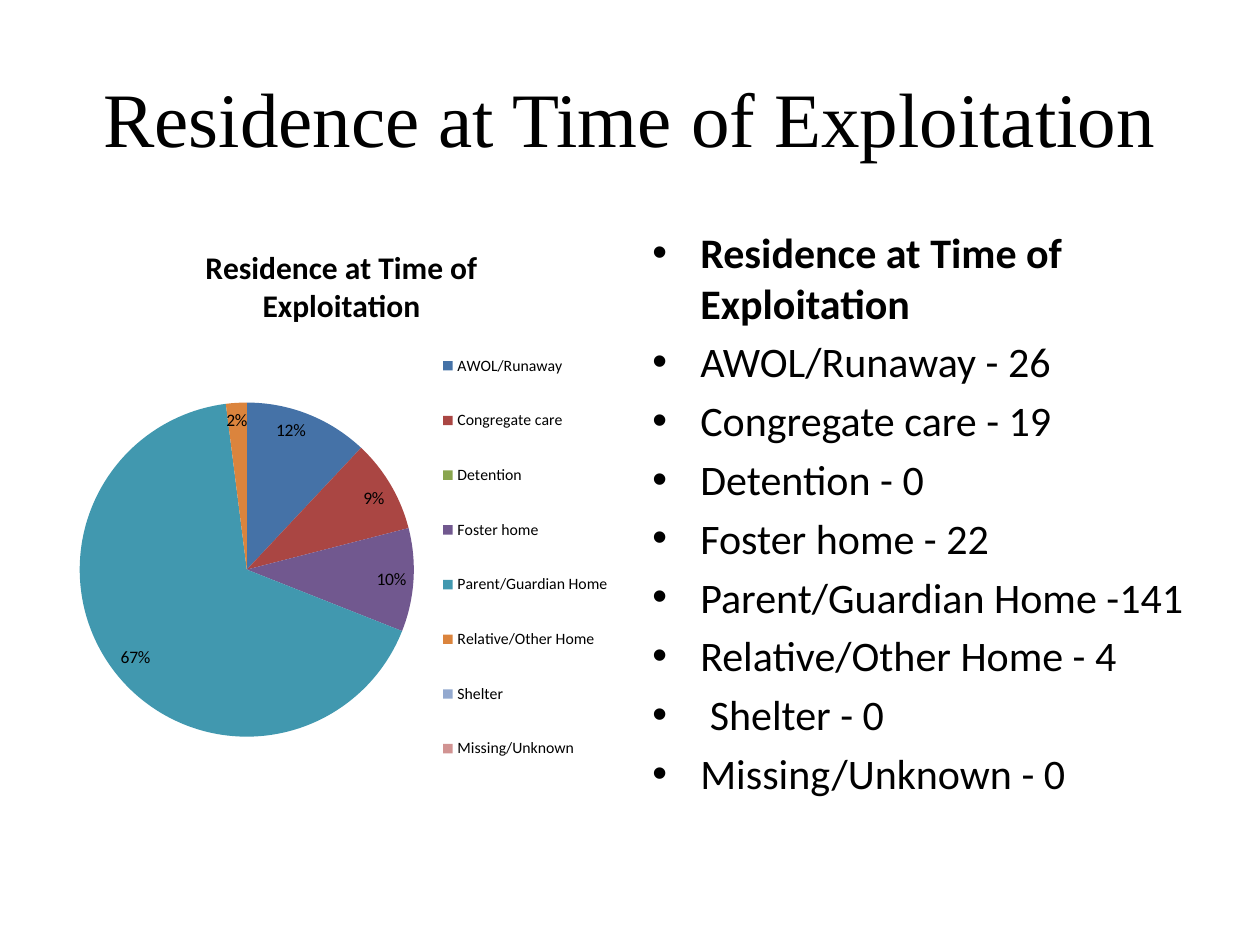
from lxml import etree
from pptx import Presentation
from pptx.chart.data import CategoryChartData
from pptx.dml.color import RGBColor
from pptx.enum.chart import XL_CHART_TYPE as ChartType
from pptx.enum.chart import XL_LABEL_POSITION as LabelPos
from pptx.enum.chart import XL_LEGEND_POSITION as LegendPos
from pptx.enum.text import MSO_ANCHOR as Anchor
from pptx.enum.text import PP_ALIGN as Align
from pptx.oxml.ns import qn
from pptx.util import Inches, Pt

BLACK = RGBColor(0, 0, 0)
SLICE_COLORS = [RGBColor.from_string(c) for c in (
    "4572A7", "AA4643", "89A54E", "71588F",
    "4198AF", "DB843D", "93A9CF", "D19392")]

HEADING = "Residence at Time of Exploitation"
SHARES = {
    "AWOL/Runaway": 12,
    "Congregate care": 9,
    "Detention": 0,
    "Foster home": 10,
    "Parent/Guardian Home": 67,
    "Relative/Other Home": 2,
    "Shelter": 0,
    "Missing/Unknown": 0,
}
COUNTS = [
    "AWOL/Runaway - 26",
    "Congregate care - 19",
    "Detention - 0",
    "Foster home - 22",
    "Parent/Guardian Home -141",
    "Relative/Other Home - 4",
    " Shelter - 0",
    "Missing/Unknown - 0",
]


class Deck:
    """Holds the style and the current slide."""
    body_font = "Calibri"
    title_font = "Times New Roman"

    def __init__(self, width, height):
        self.prs = Presentation()
        self.prs.slide_width, self.prs.slide_height = width, height
        self.s = self.prs.slides.add_slide(self.prs.slide_layouts[6])

    def style(self, font, size, name=None, bold=False):
        font.name, font.size, font.bold = name or self.body_font, Pt(size), bold
        font.color.rgb = BLACK

    def text_frame(self, x, y, w, h):
        tf = self.s.shapes.add_textbox(x, y, w, h).text_frame
        tf.word_wrap = True
        return tf

    def title(self, text, *box):
        tf = self.text_frame(*box)
        tf.vertical_anchor = Anchor.MIDDLE
        p = tf.paragraphs[0]
        p.alignment = Align.CENTER
        r = p.add_run()
        r.text = text
        self.style(r.font, 44, self.title_font)

    def bullets(self, heading, items, *box):
        tf = self.text_frame(*box)
        indent = Inches(0.38)
        for i, text in enumerate([heading, *items]):
            p = tf.add_paragraph() if i else tf.paragraphs[0]
            p.space_before = Pt(4.8)
            pPr = p._p.get_or_add_pPr()
            pPr.set("marL", str(indent))
            pPr.set("indent", str(-indent))
            etree.SubElement(pPr, qn("a:buFont")).set("typeface", "Arial")
            etree.SubElement(pPr, qn("a:buChar")).set("char", "•")
            r = p.add_run()
            r.text = text
            self.style(r.font, 24, bold=i == 0)

    def chart_layout(self, parent, index, inner=False, **fractions):
        """Place a chart part by fractions of the chart's size."""
        for old in parent.findall(qn("c:layout")):
            parent.remove(old)
        layout = etree.Element(qn("c:layout"))
        manual = etree.SubElement(layout, qn("c:manualLayout"))
        settings = {"layoutTarget": "inner"} if inner else {}
        settings.update(xMode="edge", yMode="edge", **fractions)
        for tag, value in settings.items():
            etree.SubElement(manual, qn("c:" + tag)).set("val", str(value))
        parent.insert(index, layout)

    def pie(self, title, shares, *box):
        data = CategoryChartData()
        data.categories = list(shares)
        data.add_series("Series 1", list(shares.values()))
        chart = self.s.shapes.add_chart(ChartType.PIE, *box, data).chart
        self.style(chart.font, 10)

        # Chart title
        chart.has_title = True
        r = chart.chart_title.text_frame.paragraphs[0].add_run()
        r.text = title
        self.style(r.font, 18, bold=True)

        # Slices and percentages
        plot = chart.plots[0]
        plot.vary_by_categories = True
        for i, color in enumerate(SLICE_COLORS):
            fill = plot.series[0].points[i].format.fill
            fill.solid()
            fill.fore_color.rgb = color
        labels = plot.series[0].data_labels
        labels.show_percentage = True
        labels.show_value = False
        labels.number_format = "0%;\\-0%;"
        labels.number_format_is_linked = False
        labels.position = LabelPos.INSIDE_END
        self.style(labels.font, 10)

        # Legend
        chart.has_legend = True
        legend = chart.legend
        legend.position = LegendPos.RIGHT
        legend.include_in_layout = False
        self.style(legend.font, 9)

        plot_area = chart._chartSpace.find(".//" + qn("c:plotArea"))
        self.chart_layout(plot_area, 0, inner=True, x=0.03, y=0.29, w=0.6, h=0.54)
        self.chart_layout(legend._element, 1, x=0.67, y=0.16, w=0.32, h=0.76)


def main():
    deck = Deck(Inches(10), Inches(7.5))
    margin, top = Inches(0.5), Inches(1.75)
    column = Inches(4.42), Inches(4.95)

    # Title above two equal columns: chart and counts
    deck.title(HEADING, margin, Inches(0.3), Inches(9), Inches(1.25))
    deck.pie(HEADING, SHARES, margin, top, *column)
    deck.bullets(HEADING, COUNTS, Inches(5.08), top, *column)
    deck.prs.save("out.pptx")


if __name__ == "__main__":
    main()
